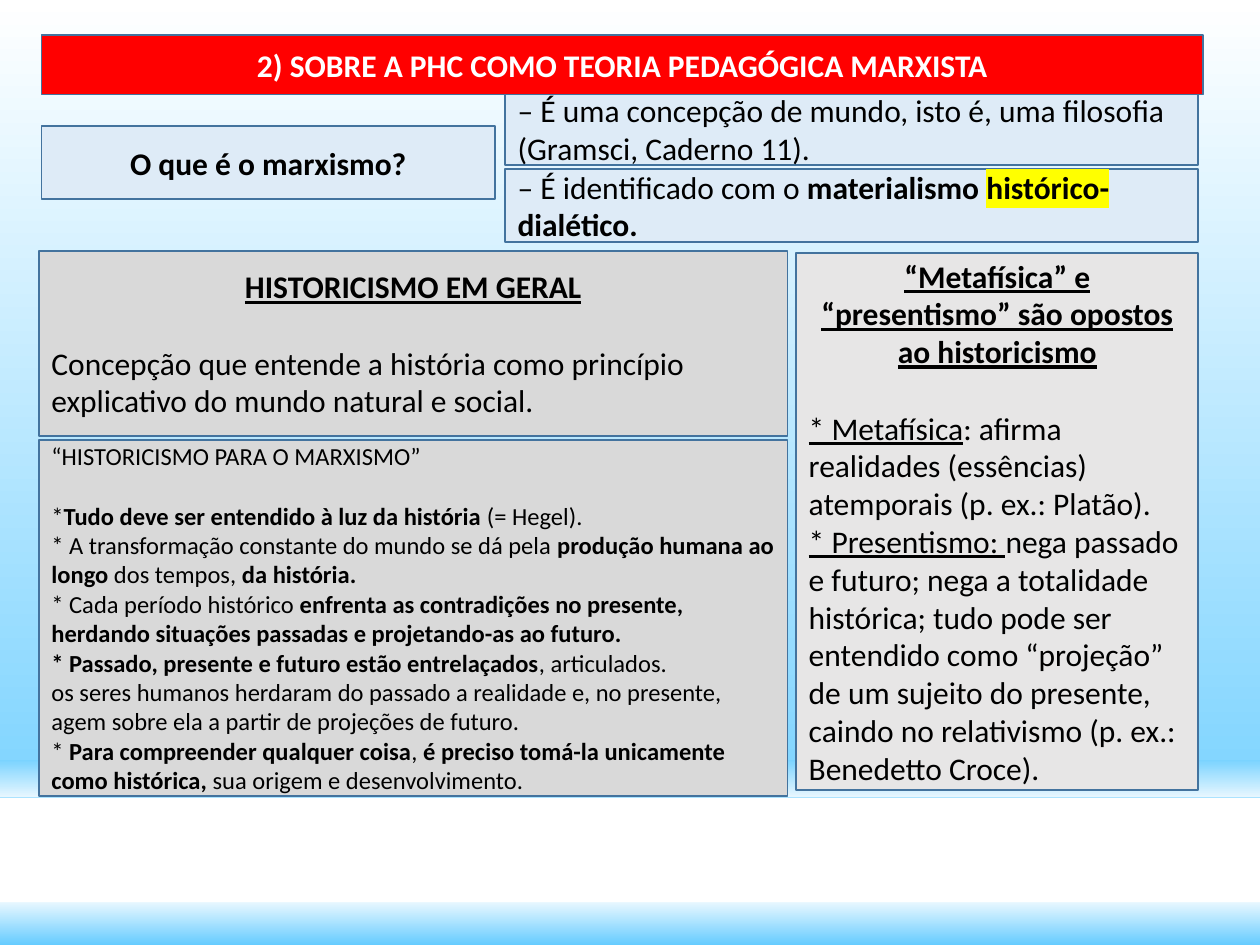
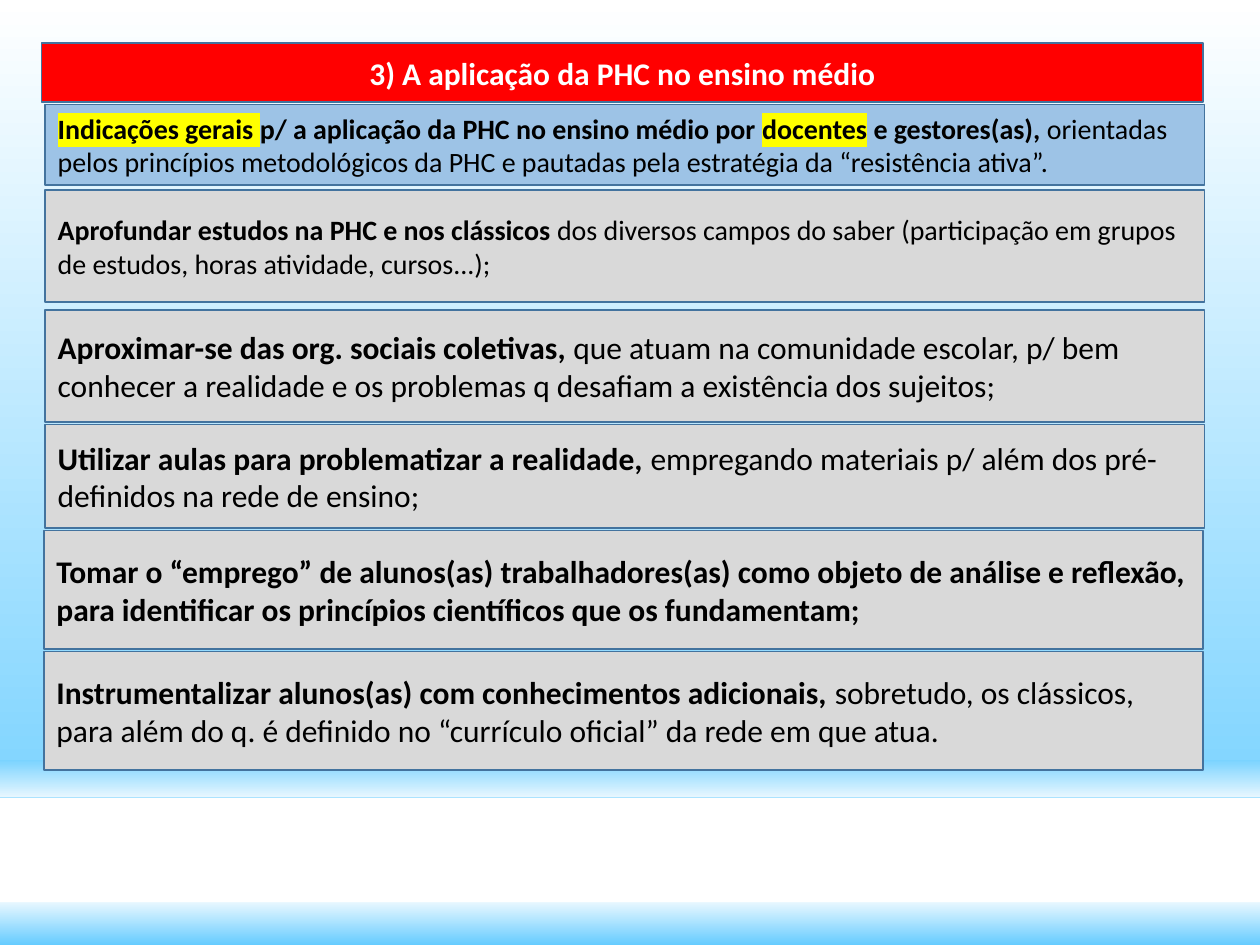
from lxml import etree
from pptx import Presentation
from pptx.dml.color import RGBColor
from pptx.enum.shapes import MSO_SHAPE
from pptx.enum.text import MSO_ANCHOR, PP_ALIGN
from pptx.oxml.ns import qn
from pptx.util import Inches, Pt

RECT = MSO_SHAPE.RECTANGLE
MIDDLE = MSO_ANCHOR.MIDDLE
LEFT, CENTER = PP_ALIGN.LEFT, PP_ALIGN.CENTER

FONT = "Calibri"
WIDTH, HEIGHT = 10, 7.5
BLACK, WHITE, RED, BORDER = "000000", "FFFFFF", "FF0000", "43739E"
SKY, HORIZON, HAZE, YELLOW = "66CCFF", "7AD3FF", "E8F7FF", "FFFF00"
PALE_BLUE, BLUE, GRAY, LIGHT_GRAY = "DEEBF7", "9DC3E6", "D9D9D9", "E7E6E6"
BAND_TOP, BAND_HEIGHT, HAZE_HEIGHT = 6.33, 0.83, 0.3

HISTORICISM = [
    [("HISTORICISMO EM GERAL", "bu")],
    [("Concepção que entende a história como princípio explicativo do mundo "
      "natural e social.", "")],
]
MARXIST_HISTORICISM = [
    [("“HISTORICISMO PARA O MARXISMO”", "")],
    [("*", ""), ("Tudo deve ser entendido à luz da história ", "b"), ("(= Hegel).", "")],
    [("* A transformação constante do mundo se dá pela ", ""),
     ("produção humana ao longo ", "b"), ("dos tempos, ", ""), ("da história.", "b")],
    [("* Cada período histórico ", ""),
     ("enfrenta as contradições no presente, herdando situações passadas e "
      "projetando-as ao futuro.", "b")],
    [("* Passado, presente e futuro estão entrelaçados", "b"), (", articulados.", "")],
    [("os seres humanos herdaram do passado a realidade e, no presente, agem sobre "
      "ela a partir de projeções de futuro.", "")],
    [("* ", ""), ("Para compreender qualquer coisa", "b"), (", ", ""),
     ("é preciso tomá-la unicamente como histórica,", "b"),
     (" sua origem e desenvolvimento.", "")],
]
OPPOSITES = [
    [("“Metafísica” e “presentismo” são opostos ao historicismo", "bu")],
    [("* Metafísica", "u"),
     (": afirma realidades (essências) atemporais (p. ex.: Platão).", "")],
    [("* Presentismo: ", "u"),
     ("nega passado e futuro; nega a totalidade histórica; tudo pode ser entendido "
      "como “projeção” de um sujeito do presente, caindo no relativismo (p. ex.: "
      "Benedetto Croce).", "")],
]
ANSWERS = [
    [("– É uma concepção de mundo, isto é, uma filosofia (Gramsci, Caderno 11).", "")],
    [("– É identificado com o ", ""), ("materialismo ", "b"), ("histórico-", "bh"),
     ("dialético.", "b")],
]
GUIDELINES = [
    (0.36, 0.83, 0.64, BLUE, 16, [
        ("Indicações gerais ", "bh"), ("p/ a aplicação da PHC no ensino médio por ", "b"),
        ("docentes", "bh"), (" e gestores(as), ", "b"),
        ("orientadas pelos princípios metodológicos da PHC e pautadas pela estratégia "
         "da “resistência ativa”.", "")]),
    (0.36, 1.51, 0.89, GRAY, 16, [
        ("Aprofundar estudos na PHC e nos clássicos ", "b"),
        ("dos diversos campos do saber (participação em grupos de estudos, horas "
         "atividade, cursos...);", "")]),
    (0.36, 2.46, 0.89, GRAY, 18, [
        ("Aproximar-se das org. sociais coletivas, ", "b"),
        ("que atuam na comunidade escolar, p/ bem conhecer a realidade e os problemas "
         "q desafiam a existência dos sujeitos;", "")]),
    (0.36, 3.37, 0.82, GRAY, 18, [
        ("Utilizar aulas para problematizar a realidade, ", "b"),
        ("empregando materiais p/ além dos pré-definidos na rede de ensino;", "")]),
    (0.35, 4.21, 0.94, GRAY, 18, [
        ("Tomar o “emprego” de alunos(as) trabalhadores(as) como objeto de análise e "
         "reflexão, para identificar os princípios científicos que os fundamentam;", "b")]),
    (0.35, 5.17, 0.94, GRAY, 18, [
        ("Instrumentalizar alunos(as) com conhecimentos adicionais, ", "b"),
        ("sobretudo, os clássicos, para além do q. é definido no “currículo oficial” da "
         "rede em que atua.", "")]),
]


def color(hex_string):
    """Return the colour for a hex string."""
    return RGBColor.from_string(hex_string)


def add_rect(slide, box, fill=None, line=None):
    """Add a rectangle without shadow, optionally filled and outlined."""
    sp = slide.shapes.add_shape(RECT, *(Inches(v) for v in box))
    sp.shadow.inherit = False
    if fill:
        sp.fill.solid()
        sp.fill.fore_color.rgb = color(fill)
    if line:
        sp.line.color.rgb = color(line)
        sp.line.width = Pt(1)
    else:
        sp.line.fill.background()
    return sp


def add_gradient(slide, box, bottom, top):
    """Add a rectangle shaded vertically between two colours."""
    fill = add_rect(slide, box).fill
    fill.gradient()
    fill.gradient_angle = 90
    for stop, shade in zip(fill.gradient_stops, (bottom, top)):
        stop.color.rgb = color(shade)


def add_backdrop(slide):
    """Draw the sky gradient and the white band with its hazy edges."""
    band_bottom = BAND_TOP + BAND_HEIGHT
    add_gradient(slide, (0, 0, WIDTH, HEIGHT), SKY, WHITE)
    add_gradient(slide, (0, BAND_TOP - HAZE_HEIGHT, WIDTH, HAZE_HEIGHT), HAZE, HORIZON)
    add_gradient(slide, (0, band_bottom, WIDTH, HEIGHT - band_bottom), SKY, HAZE)
    add_rect(slide, (0, BAND_TOP, WIDTH, BAND_HEIGHT), WHITE)


def add_run(p, text, style):
    """Add a run styled by letters: b bold, u underline, h highlight."""
    r = p.add_run()
    r.text = text
    r.font.bold = "b" in style
    r.font.underline = "u" in style
    if "h" in style:
        highlight = etree.SubElement(r._r.get_or_add_rPr(), qn("a:highlight"))
        etree.SubElement(highlight, qn("a:srgbClr"), val=YELLOW)


def add_panel(slide, box, fill, paragraphs, size=18, first_align=LEFT, ink=BLACK):
    """Add an outlined panel whose first paragraph is set apart as a heading."""
    tf = add_rect(slide, box, fill, BORDER).text_frame
    tf.word_wrap = True
    tf.vertical_anchor = MIDDLE
    for i, runs in enumerate(paragraphs):
        p = tf.paragraphs[0] if i == 0 else tf.add_paragraph()
        p.alignment = first_align if i == 0 else LEFT
        if i == 1:
            p.space_before = Pt(round(size * 1.22))
        p.font.name = FONT
        p.font.size = Pt(size)
        p.font.color.rgb = color(ink)
        for text, style in runs:
            add_run(p, text, style)


def add_title(slide, text, top):
    """Add the red title bar."""
    add_panel(slide, (0.33, top, 9.22, 0.47), RED, [[(text, "b")]],
              first_align=CENTER, ink=WHITE)


def add_answers(slide, left, top, width):
    """Stack the answers to the question about Marxism."""
    for i, runs in enumerate(ANSWERS):
        add_panel(slide, (left, top + i * 0.61, width, 0.58), PALE_BLUE, [runs])


def add_historicism(slide, left, top, width):
    """Stack the general and the Marxist view of historicism."""
    add_panel(slide, (left, top, width, 1.47), GRAY, HISTORICISM, first_align=CENTER)
    add_panel(slide, (left, top + 1.5, width, 2.83), GRAY, MARXIST_HISTORICISM, size=14)


def build_theory_slide(slide):
    """Build the slide on the theory and its historicism."""
    add_backdrop(slide)
    add_panel(slide, (0.33, 1, 3.6, 0.58), PALE_BLUE,
              [[("O que é o marxismo?", "b")]], first_align=CENTER)
    add_historicism(slide, 0.31, 1.99, 5.94)
    add_panel(slide, (6.32, 2.01, 3.19, 4.26), LIGHT_GRAY, OPPOSITES, first_align=CENTER)
    add_answers(slide, 4.01, 0.73, 5.5)
    add_title(slide, "2) SOBRE A PHC COMO TEORIA PEDAGÓGICA MARXISTA", 0.28)


def build_application_slide(slide):
    """Build the slide listing guidelines for secondary school."""
    add_backdrop(slide)
    add_title(slide, "3) A aplicação da PHC no ensino médio", 0.34)
    for left, top, height, fill, size, runs in GUIDELINES:
        add_panel(slide, (left, top, 9.2, height), fill, [runs], size)


def main():
    """Create and save the presentation."""
    prs = Presentation()
    prs.slide_width, prs.slide_height = Inches(WIDTH), Inches(HEIGHT)
    for build in (build_theory_slide, build_application_slide):
        build(prs.slides.add_slide(prs.slide_layouts[6]))
    prs.save("out.pptx")


if __name__ == "__main__":
    main()
